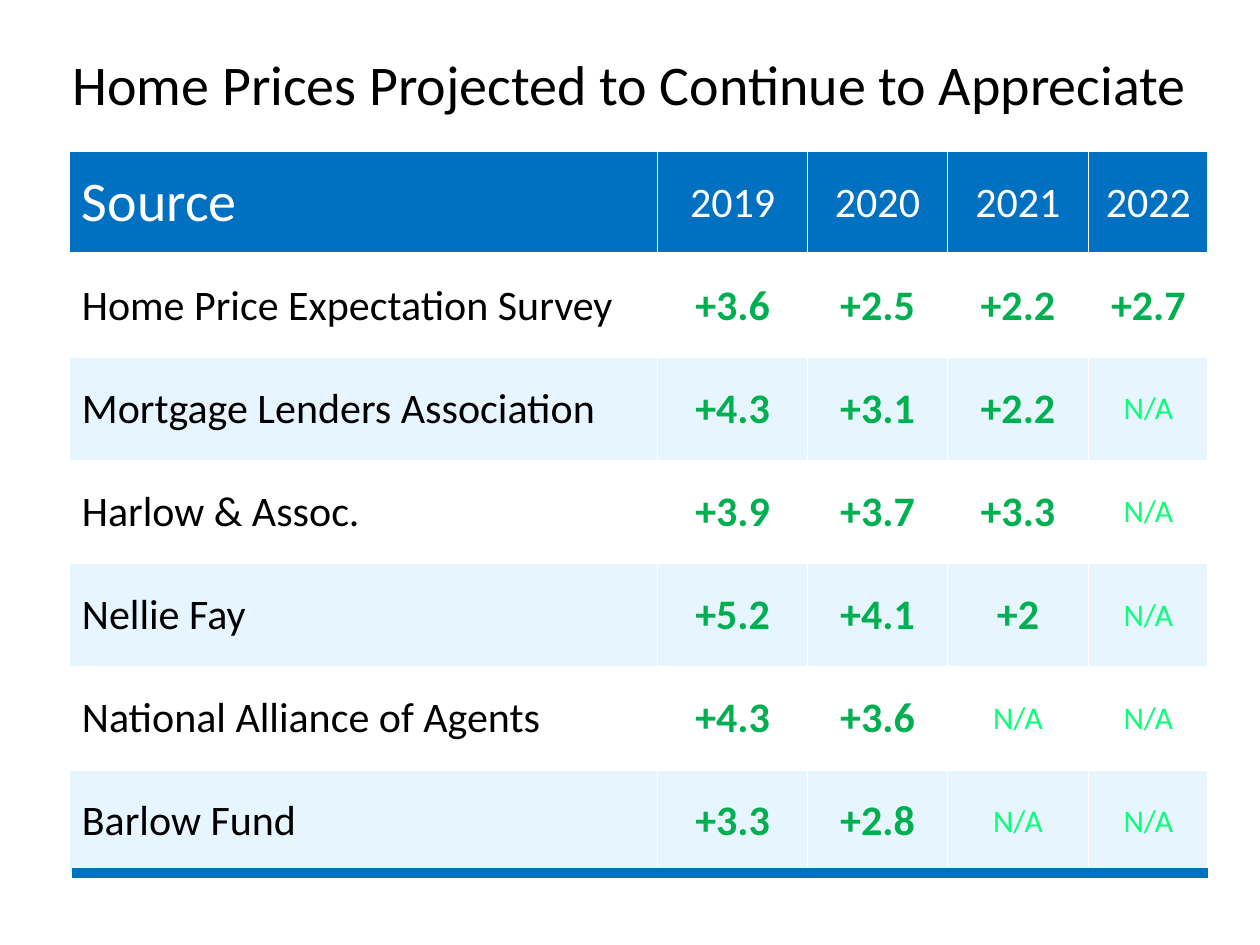
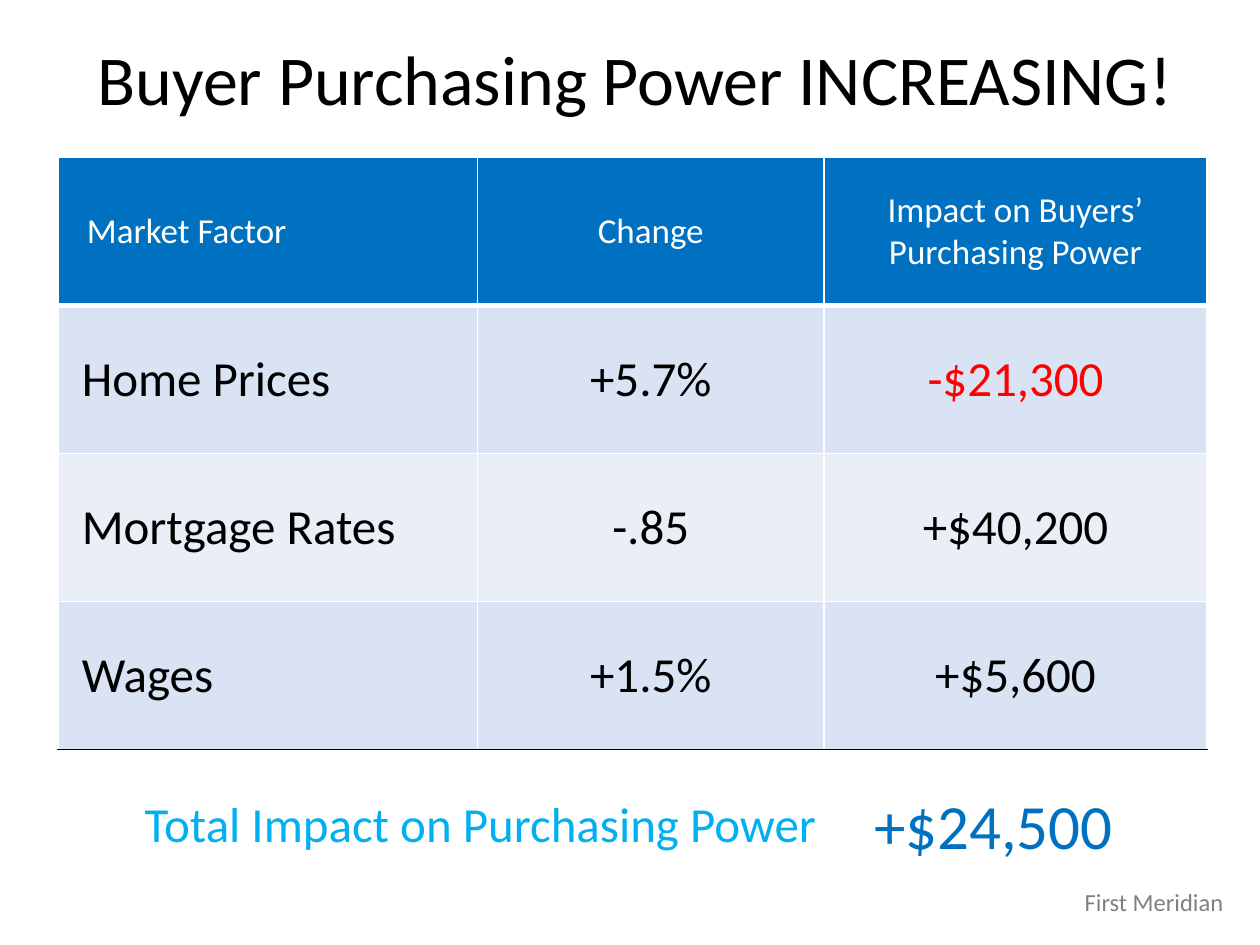
from lxml import etree
from pptx import Presentation
from pptx.dml.color import RGBColor
from pptx.enum.shapes import MSO_CONNECTOR
from pptx.enum.text import MSO_ANCHOR, PP_ALIGN
from pptx.oxml.ns import qn
from pptx.util import Inches, Pt

LEFT, CENTER = PP_ALIGN.LEFT, PP_ALIGN.CENTER
MIDDLE = MSO_ANCHOR.MIDDLE
STRAIGHT = MSO_CONNECTOR.STRAIGHT

FACE = "Calibri"
BLUE, SKY, GREY = "0070C0", "00B0F0", "808080"
WHITE, BLACK, RED = "FFFFFF", "000000", "FF0000"
GREEN, LIME = "00B050", "09FF78"
ICE, MIST, PALE = "E7F5FF", "DAE3F3", "EAEFF7"

PRICES = [
    ("Source", "2019", "2020", "2021", "2022"),
    ("Home Price Expectation Survey", "+3.6", "+2.5", "+2.2", "+2.7"),
    ("Mortgage Lenders Association", "+4.3", "+3.1", "+2.2", "N/A"),
    ("Harlow & Assoc.", "+3.9", "+3.7", "+3.3", "N/A"),
    ("Nellie Fay", "+5.2", "+4.1", "+2", "N/A"),
    ("National Alliance of Agents", "+4.3", "+3.6", "N/A", "N/A"),
    ("Barlow Fund", "+3.3", "+2.8", "N/A", "N/A"),
]
POWER = [
    ("Market Factor", "Change", "Impact on Buyers’\nPurchasing Power"),
    ("Home Prices", "+5.7%", "-$21,300"),
    ("Mortgage Rates", "-.85", "+$40,200"),
    ("Wages", "+1.5%", "+$5,600"),
]


def tint(code):
    """Turn a hex string into a colour."""
    return RGBColor.from_string(code)


def write(frame, text, size, color, bold=False, align=LEFT):
    """Fill a text frame, one paragraph a line, in one format."""
    frame.text = text
    form = {"name": FACE, "size": Pt(size), "bold": bold}
    for para in frame.paragraphs:
        para.alignment = align
        for run in para.runs:
            for key, value in form.items():
                setattr(run.font, key, value)
            run.font.color.rgb = tint(color)


def label(slide, box, text, size, color, align=LEFT, wrap=False):
    """Add a text box."""
    frame = slide.shapes.add_textbox(*map(Inches, box)).text_frame
    frame.word_wrap = wrap
    write(frame, text, size, color, align=align)


def title(slide, box, text, size):
    """Add the centred slide title."""
    label(slide, box, text, size, BLACK, CENTER, True)


def rule(slide, start, end, color, width):
    """Add a straight line without a shadow."""
    line = slide.shapes.add_connector(STRAIGHT, *map(Inches, start + end))
    line.line.color.rgb = tint(color)
    line.line.width = Pt(width)
    etree.SubElement(line._element.spPr, qn("a:effectLst"))


def edge(cell, base):
    """Draw white cell borders with the given colour and width at the base."""
    props = cell._tc.get_or_add_tcPr()
    thin = (WHITE, 1)
    sides = {"lnL": thin, "lnR": thin, "lnT": thin, "lnB": base}
    for spot, (side, (color, width)) in enumerate(sides.items()):
        line = etree.Element(qn(f"a:{side}"), w=str(Pt(width)))
        fill = etree.SubElement(line, qn("a:solidFill"))
        etree.SubElement(fill, qn("a:srgbClr"), val=color)
        props.insert(spot, line)


def grid(slide, spot, cols, high, rows, bands, look, foot=WHITE):
    """Add a table; look gives size, colour, weight and left margin."""
    size = (sum(cols), high * len(rows))
    table = slide.shapes.add_table(
        len(rows), len(cols), *map(Inches, spot + size)).table
    table.first_row = table.horz_banding = False
    for col, width in zip(table.columns, cols):
        col.width = Inches(width)
    for r, row in enumerate(rows):
        table.rows[r].height = Inches(high)
        back = bands[(r - 1) % 2] if r else BLUE
        base = (foot if r == len(rows) - 1 else WHITE, 1 if r else 3)
        for c, text in enumerate(row):
            cell = table.cell(r, c)
            points, color, bold, inset = look(r, c, text)
            cell.vertical_anchor = MIDDLE
            cell.margin_left = Inches(inset)
            cell.fill.solid()
            cell.fill.fore_color.rgb = tint(back)
            edge(cell, base)
            write(cell.text_frame, text, points, color, bold,
                  CENTER if c else LEFT)


def price(r, c, text):
    """Give the look of a cell in the price table."""
    if r == 0:
        return 24 if c else 32, WHITE, False, 0.1
    if c == 0:
        return 24, BLACK, False, 0.1
    if text == "N/A":
        return 18, LIME, False, 0.1
    return 24, GREEN, True, 0.1


def power(r, c, text):
    """Give the look of a cell in the purchasing power table."""
    if r == 0:
        return 20, WHITE, False, 0.1 if c else 0.23
    color = RED if text.startswith("-$") else BLACK
    return 28, color, False, 0.1 if c else 0.19


def main():
    """Build both slides."""
    deck = Presentation()
    deck.slide_width, deck.slide_height = Inches(10), Inches(7.5)
    blank = deck.slide_layouts[6]

    slide = deck.slides.add_slide(blank)
    grid(slide, (0.55, 1.2), (4.67, 1.19, 1.11, 1.12, 0.95), 5.73 / 7,
         PRICES, (WHITE, ICE), price)
    title(slide, (0, 0.34, 10, 0.64),
          "Home Prices Projected to Continue to Appreciate", 32)
    rule(slide, (0.57, 6.93), (9.59, 6.93), BLUE, 6)

    slide = deck.slides.add_slide(blank)
    grid(slide, (0.46, 1.25), (3.33, 2.75, 3.04), 4.7 / 4,
         POWER, (MIST, PALE), power, BLACK)
    title(slide, (0.03, 0.23, 10.02, 0.77),
          "Buyer Purchasing Power INCREASING!", 40)
    label(slide, (8.51, 6.99, 1.35, 0.34), "First Meridian", 14, GREY)
    label(slide, (6.84, 6.19, 2.11, 0.71), "+$24,500", 36, BLUE)
    label(slide, (1.05, 6.25, 5.59, 0.57),
          "Total Impact on Purchasing Power", 28, SKY)

    deck.save("out.pptx")


if __name__ == "__main__":
    main()
